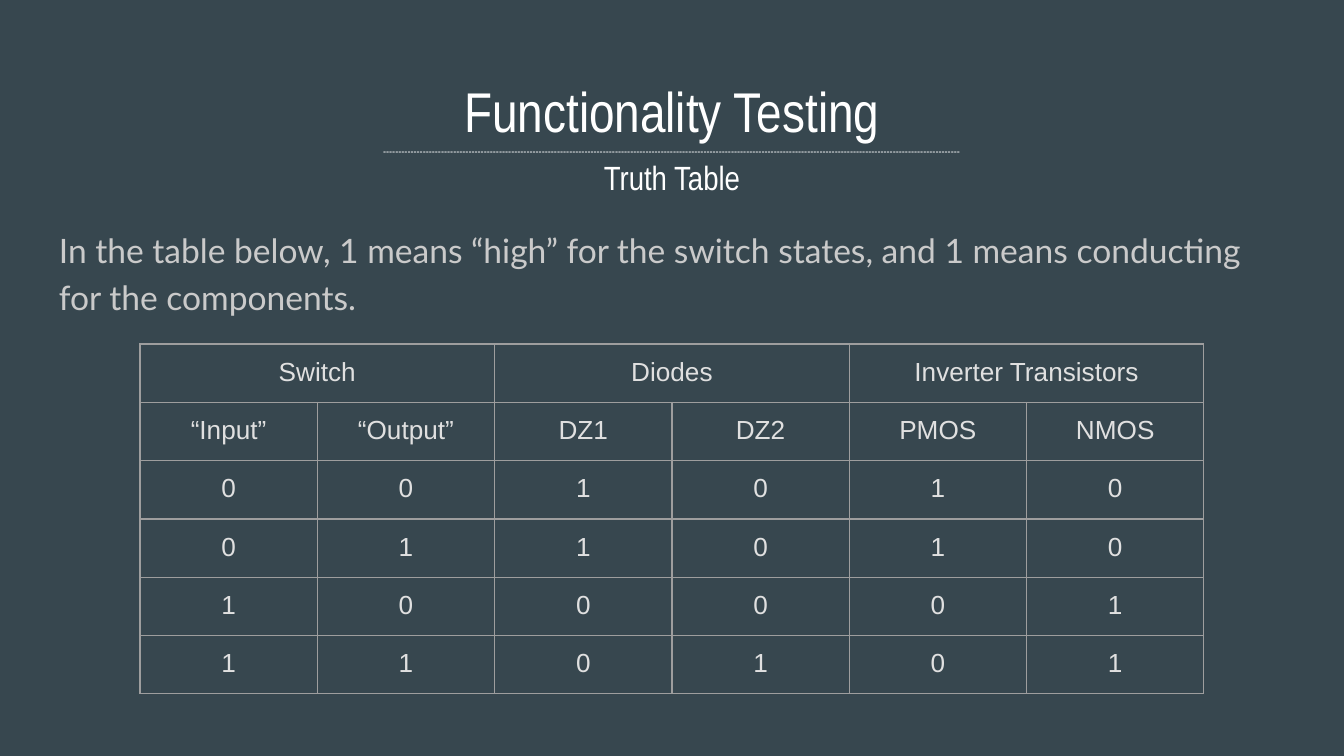
from pptx import Presentation
from pptx.dml.color import RGBColor
from pptx.enum.text import MSO_ANCHOR, PP_ALIGN
from pptx.oxml import parse_xml
from pptx.oxml.ns import nsdecls
from pptx.util import Pt

LEFT, MID = PP_ALIGN.LEFT, PP_ALIGN.CENTER
TOP, BASE = MSO_ANCHOR.TOP, MSO_ANCHOR.BOTTOM
INK = {"back": "37474F", "title": "FFFFFF", "body": "CACACA",
       "cell": "E0E0E0", "edge": "9E9E9E"}
PAD = Pt(7.2)


class Deck:
    def __init__(self, wide, high):
        self.show = Presentation()
        self.show.slide_width, self.show.slide_height = Pt(wide), Pt(high)
        self.slide = self.show.slides.add_slide(self.show.slide_layouts[6])
        fill = self.slide.background.fill
        fill.solid()
        fill.fore_color.rgb = RGBColor.from_string(INK["back"])

    def inset(self, item):
        item.margin_left = item.margin_right = PAD
        item.margin_top = item.margin_bottom = PAD

    def label(self, para, text, size, face, ink, align=MID):
        para.alignment = align
        run = para.add_run()
        run.text = text
        run.font.size = Pt(size)
        run.font.name = face
        run.font.color.rgb = RGBColor.from_string(INK[ink])

    def text(self, box, lines, face, ink, align, anchor):
        frame = self.slide.shapes.add_textbox(*map(Pt, box)).text_frame
        frame.word_wrap = True
        frame.vertical_anchor = anchor
        self.inset(frame)
        for i, (text, size) in enumerate(lines):
            para = frame.add_paragraph() if i else frame.paragraphs[0]
            self.label(para, text, size, face, ink, align)
        return frame

    def edge(self, cell):
        props = cell._tc.get_or_add_tcPr()
        for i, side in enumerate(("lnL", "lnR", "lnT", "lnB")):
            props.insert(i, parse_xml(
                f'<a:{side} {nsdecls("a")} w="{Pt(0.75)}"><a:solidFill>'
                f'<a:srgbClr val="{INK["edge"]}"/></a:solidFill></a:{side}>'))

    def table(self, left, top, wide, high, heads, rows):
        count = len(rows[0])
        span = count // len(heads)
        box = (left, top, wide * count, high * (len(rows) + 1))
        grid = self.slide.shapes.add_table(
            len(rows) + 1, count, *map(Pt, box)).table
        grid.first_row = grid.horz_banding = False
        for col in grid.columns:
            col.width = Pt(wide)
        for row in grid.rows:
            row.height = Pt(high)
        for cell in grid.iter_cells():
            cell.fill.background()
            self.inset(cell)
            self.edge(cell)
        for i, head in enumerate(heads):
            cell = grid.cell(0, i * span)
            cell.merge(grid.cell(0, (i + 1) * span - 1))
            self.entry(cell, head)
        for r, row in enumerate(rows, 1):
            for c, text in enumerate(row):
                self.entry(grid.cell(r, c), text)

    def entry(self, cell, text):
        self.label(cell.text_frame.paragraphs[0], text, 14, "Arial", "cell")


def main():
    deck = Deck(720, 405)
    deck.text((24.5, 35.3, 671, 77.8),
              [("Functionality Testing", 30), ("-" * 189, 6),
               ("Truth Table", 18)],
              "Arial Narrow", "title", MID, BASE)
    body = deck.text((24.5, 113, 671, 58.3),
                     [("In the table below, 1 means “high” for the switch "
                       "states, and 1 means conducting for the components.",
                       18)],
                     "Lato", "body", LEFT, TOP)
    body.paragraphs[0].line_spacing = 1.15
    body.paragraphs[0].space_after = Pt(16)
    deck.table(75, 184.3, 95, 30.1,
               ["Switch", "Diodes", "Inverter Transistors"],
               [["“Input”", "“Output”", "DZ1", "DZ2", "PMOS", "NMOS"],
                "001010", "011010", "100001", "110101"])
    deck.show.save("out.pptx")


if __name__ == "__main__":
    main()
